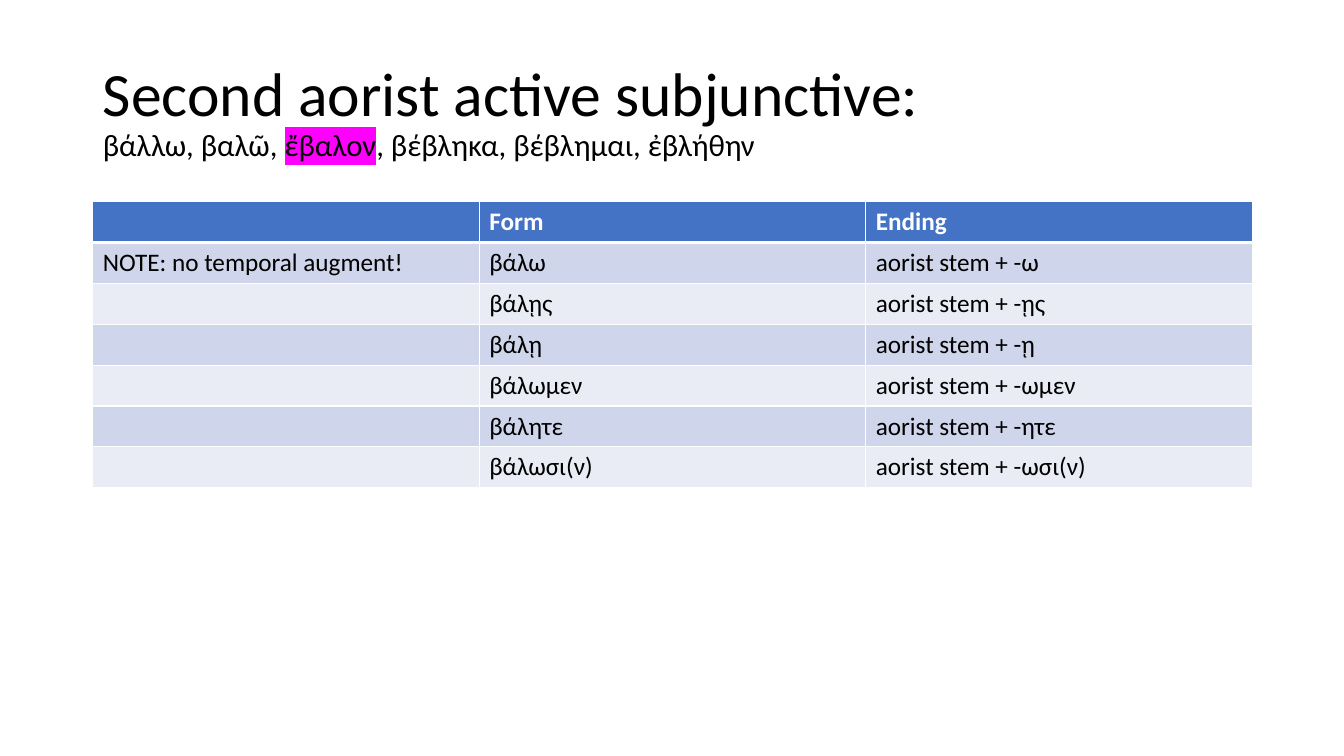
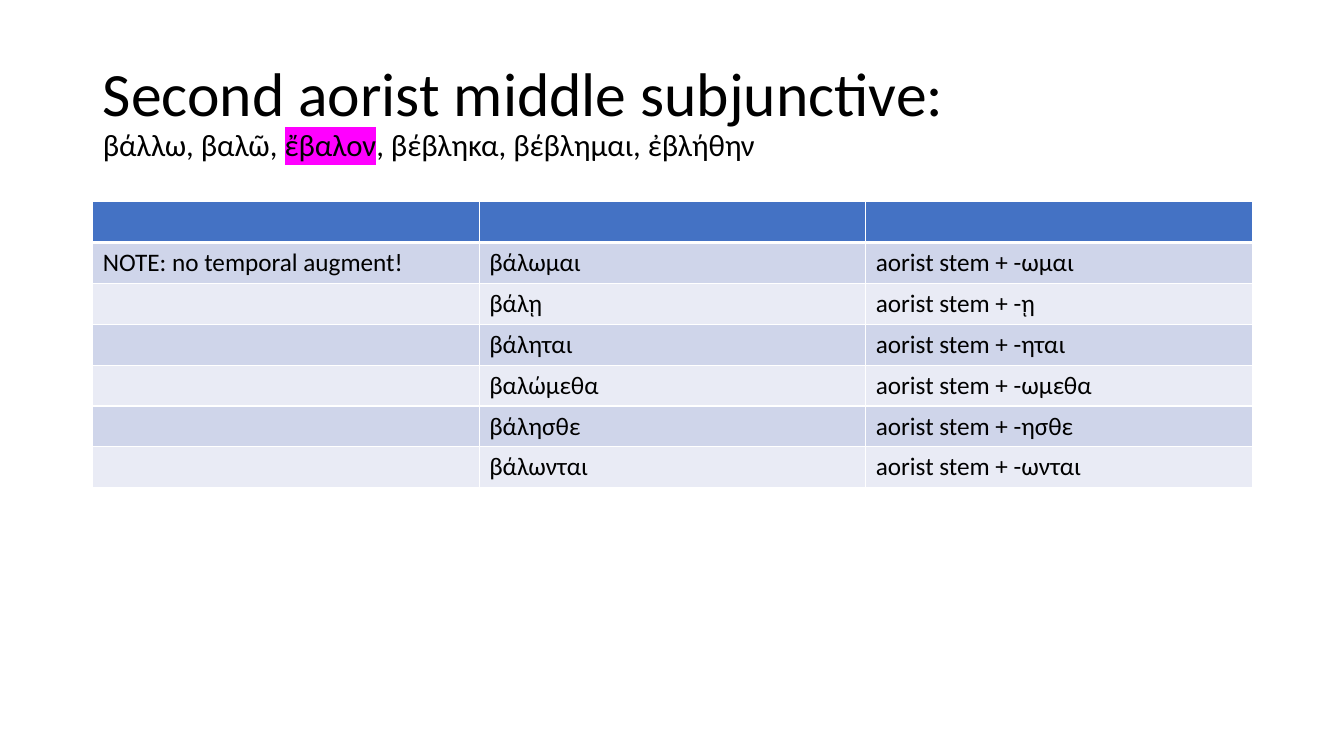
"""Build two slides on the second aorist subjunctive."""
from dataclasses import dataclass

from lxml.etree import SubElement as Sub
from pptx import Presentation as Deck
from pptx.dml.color import RGBColor as RGB
from pptx.enum.text import MSO_ANCHOR as Anchor, MSO_AUTO_SIZE as Fit, PP_ALIGN as Align
from pptx.oxml.ns import qn
from pptx.slide import Slide
from pptx.table import _Cell as Cell
from pptx.util import Inches, Pt

BLACK = RGB(0x00, 0x00, 0x00)
WHITE = RGB(0xFF, 0xFF, 0xFF)
BLUE = RGB(0x44, 0x72, 0xC4)
DARK = RGB(0xCF, 0xD5, 0xEA)
LIGHT = RGB(0xE9, 0xEB, 0xF5)
PINK = RGB(0xFF, 0x00, 0xFF)

FONT = "Calibri"
LEFT, WIDTH = Inches(0.92), Inches(11.5)
PARTS = ("βάλλω, βαλῶ, ", "ἔβαλον", ", βέβληκα, βέβλημαι, ἐβλήθην")
MARKED = 1
NOTE = "NOTE: no temporal augment!"
STEM = "aorist stem + -"


@dataclass(frozen=True)
class Voice:
    name: str
    head: tuple[str, str, str]
    forms: tuple[tuple[str, str], ...]


VOICES = (
    Voice("active", ("", "Form", "Ending"), (
        ("βάλω", "ω"),
        ("βάλῃς", "ῃς"),
        ("βάλῃ", "ῃ"),
        ("βάλωμεν", "ωμεν"),
        ("βάλητε", "ητε"),
        ("βάλωσι(ν)", "ωσι(ν)"),
    )),
    Voice("middle", ("", "", ""), (
        ("βάλωμαι", "ωμαι"),
        ("βάλῃ", "ῃ"),
        ("βάληται", "ηται"),
        ("βαλώμεθα", "ωμεθα"),
        ("βάλησθε", "ησθε"),
        ("βάλωνται", "ωνται"),
    )),
)


def add_fill(node, tag: str, color: RGB) -> None:
    Sub(Sub(node, qn(tag)), qn("a:srgbClr")).set("val", str(color))


def add_title(slide: Slide, voice: Voice) -> None:
    title = slide.shapes.title
    title.left, title.top = LEFT, Inches(0.4)
    title.width, title.height = WIDTH, Inches(1.45)
    frame = title.text_frame
    frame.auto_size = Fit.NONE
    frame.word_wrap = True
    frame.vertical_anchor = Anchor.MIDDLE
    para = frame.paragraphs[0]
    para.alignment = Align.LEFT
    para.line_spacing = 0.9
    para.font.name = FONT
    para.font.color.rgb = BLACK
    run = para.add_run()
    run.text = f"Second aorist {voice.name} subjunctive:"
    run.font.size = Pt(44)
    para.add_line_break()
    for i, part in enumerate(PARTS):
        run = para.add_run()
        run.text = part
        run.font.size = Pt(22)
        if i == MARKED:
            add_fill(run._r.get_or_add_rPr(), "a:highlight", PINK)


def style_cell(cell: Cell, text: str, row: int) -> None:
    props = cell._tc.get_or_add_tcPr()
    thick = {0: "a:lnB", 1: "a:lnT"}.get(row)
    for side in ("a:lnL", "a:lnR", "a:lnT", "a:lnB"):
        line = Sub(props, qn(side))
        line.set("w", str(int(Pt(3 if side == thick else 1))))
        add_fill(line, "a:solidFill", WHITE)
    cell.fill.solid()
    cell.fill.fore_color.rgb = BLUE if row == 0 else DARK if row % 2 else LIGHT
    para = cell.text_frame.paragraphs[0]
    if text:
        para.text = text
    font = para.font
    font.name, font.size, font.bold = FONT, Pt(18), row == 0
    font.color.rgb = BLACK if row else WHITE


def add_grid(slide: Slide, voice: Voice) -> None:
    rows = [voice.head]
    for i, (form, end) in enumerate(voice.forms):
        rows.append(("" if i else NOTE, form, STEM + end))
    frame = slide.shapes.add_table(
        len(rows), len(voice.head), LEFT, Inches(2), WIDTH, Inches(2.84))
    for r, row in enumerate(rows):
        for c, text in enumerate(row):
            style_cell(frame.table.cell(r, c), text, r)


def main() -> None:
    deck = Deck()
    deck.slide_width, deck.slide_height = Inches(13.33), Inches(7.5)
    for voice in VOICES:
        slide = deck.slides.add_slide(deck.slide_layouts.get_by_name("Title Only"))
        add_title(slide, voice)
        add_grid(slide, voice)
    deck.save("out.pptx")


if __name__ == "__main__":
    main()
